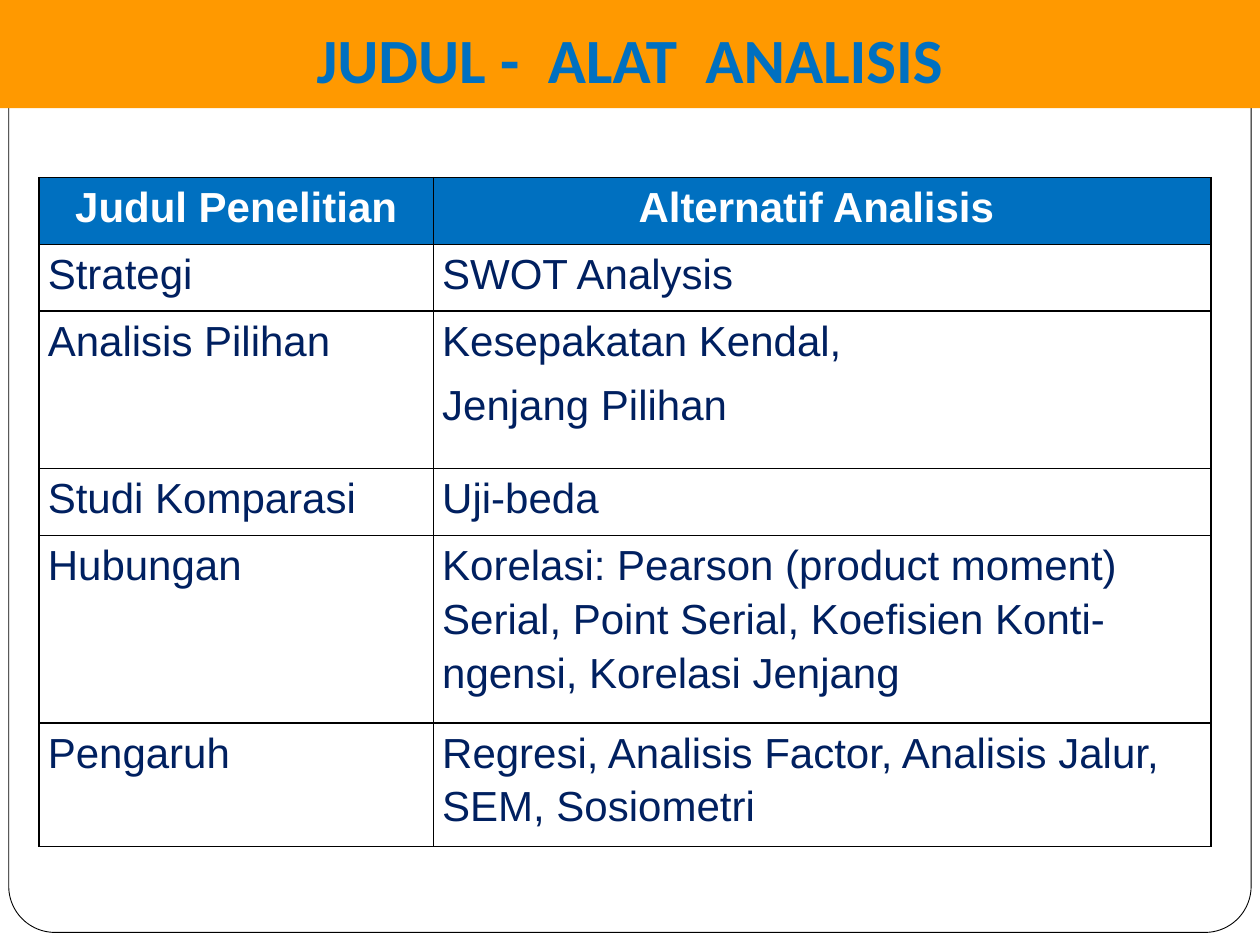
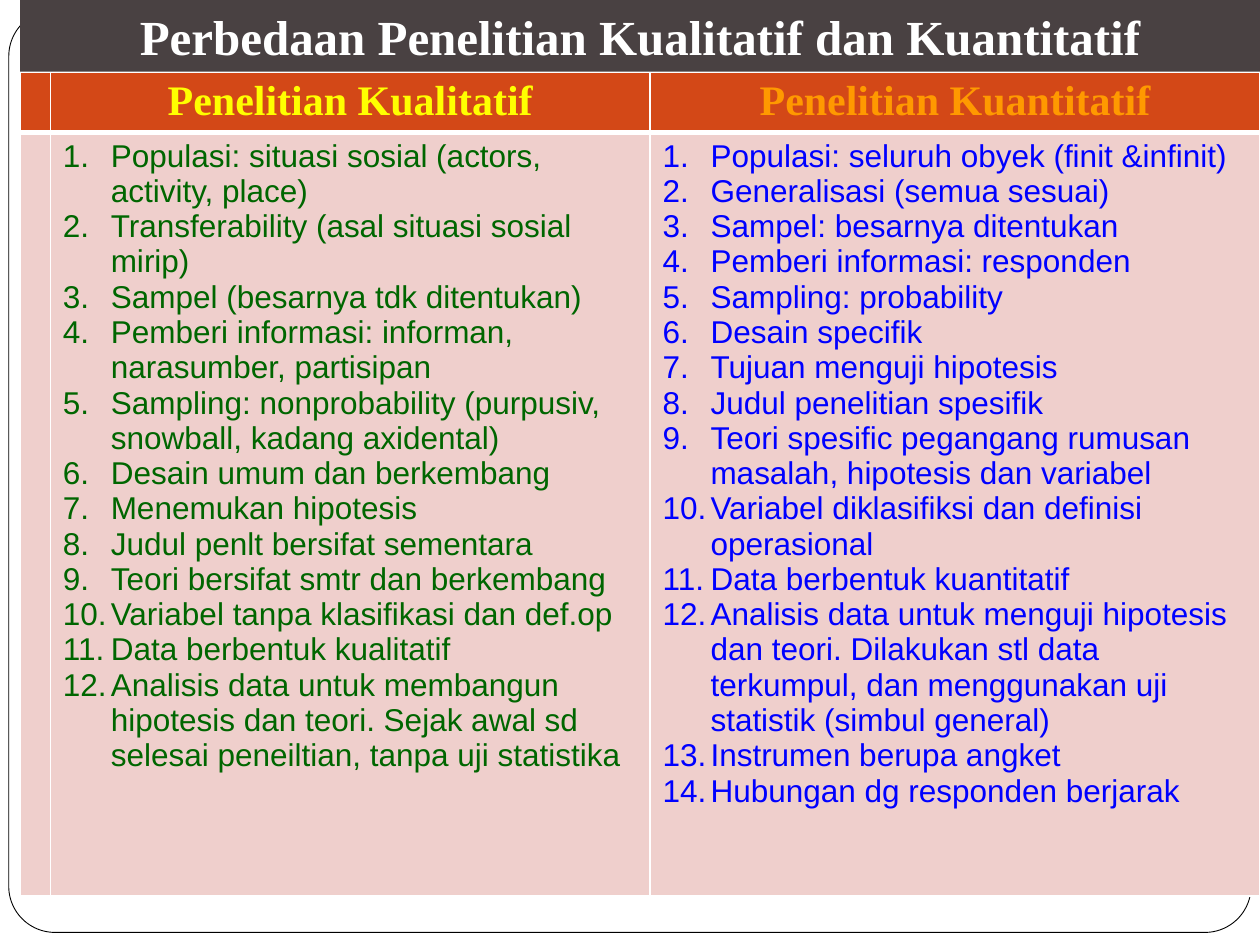
"""Builds two slides on research titles, analysis tools and research types."""
import pptx
import pptx.util
import pptx.dml.color
import pptx.enum.shapes
import pptx.enum.text
import pptx.oxml
import pptx.oxml.ns

WIDTH, HEIGHT = 10, 7.5
COLORS = {
    "paper": "FFFFFF", "ink": "000000", "orange": "FF9900", "blue": "0070C0",
    "navy": "002060", "rust": "D34817", "pink": "EFCFCC", "brown": "494142",
    "yellow": "FFFF00", "green": "006600", "bright blue": "0000FF",
}
TOOLS_TITLE = "JUDUL -  ALAT  ANALISIS"
TOOLS = [
    ("Judul Penelitian", ["Alternatif Analisis "], 0.53),
    ("Strategi", ["SWOT Analysis"], 0.53),
    ("Analisis Pilihan", ["Kesepakatan Kendal,", "Jenjang Pilihan"], 1.25),
    ("Studi Komparasi", ["Uji-beda"], 0.53),
    ("Hubungan", ["Korelasi: Pearson (product moment) Serial, Point Serial, "
                  "Koefisien Konti-ngensi, Korelasi Jenjang"], 1.49),
    ("Pengaruh", ["Regresi, Analisis Factor, Analisis Jalur, SEM, Sosiometri"], 0.98),
]
TYPES_TITLE = "Perbedaan Penelitian Kualitatif dan Kuantitatif"
TYPES = [
    ("Penelitian Kualitatif", "yellow", "green", [
        "Populasi: situasi sosial (actors, activity, place)",
        "Transferability (asal situasi sosial mirip)",
        "Sampel (besarnya tdk ditentukan)",
        "Pemberi informasi: informan, narasumber, partisipan",
        "Sampling: nonprobability (purpusiv, snowball, kadang axidental)",
        "Desain umum dan berkembang",
        "Menemukan hipotesis",
        "Judul penlt bersifat sementara",
        "Teori bersifat smtr dan berkembang",
        "Variabel tanpa klasifikasi dan def.op",
        "Data berbentuk kualitatif",
        "Analisis data untuk membangun hipotesis dan teori. Sejak awal sd "
        "selesai peneiltian, tanpa uji statistika",
    ]),
    ("Penelitian Kuantitatif", "orange", "bright blue", [
        "Populasi: seluruh obyek (finit &infinit)",
        "Generalisasi (semua sesuai)",
        "Sampel: besarnya ditentukan",
        "Pemberi informasi: responden",
        "Sampling: probability",
        "Desain specifik",
        "Tujuan menguji hipotesis",
        "Judul penelitian spesifik",
        "Teori spesific pegangang rumusan masalah, hipotesis dan variabel",
        "Variabel diklasifiksi dan definisi operasional",
        "Data berbentuk kuantitatif",
        "Analisis data untuk menguji hipotesis dan teori. Dilakukan stl data "
        "terkumpul, dan menggunakan uji statistik (simbul general)",
        "Instrumen berupa angket",
        "Hubungan dg responden berjarak",
    ]),
]


def inches(*lengths):
    return [pptx.util.Inches(length) for length in lengths]


def color(name):
    return pptx.dml.color.RGBColor.from_string(COLORS[name])


def paint(target, name):
    target.fill.solid()
    target.fill.fore_color.rgb = color(name)


def write(frame, lines, font, size, ink, bold=False, center=False, gap=None, numbered=False):
    frame.text = "\n".join(lines)
    for para in frame.paragraphs:
        align = pptx.enum.text.PP_ALIGN
        para.alignment = align.CENTER if center else align.LEFT
        if gap is not None:
            para.line_spacing = 1.15
            para.space_before = para.space_after = pptx.util.Pt(gap)
        if numbered:
            properties = para._p.get_or_add_pPr()
            indent = pptx.util.Inches(0.38)
            properties.set("marL", str(indent))
            properties.set("indent", str(-indent))
            number = pptx.oxml.ns.qn("a:buAutoNum")
            properties.append(properties.makeelement(number, {"type": "arabicPeriod"}))
        for span in para.runs:
            span.font.name = font
            span.font.size = pptx.util.Pt(size)
            span.font.bold = bold
            span.font.color.rgb = color(ink)


def add_block(page, kind, place, fill):
    box = page.shapes.add_shape(kind, *inches(*place))
    box.shadow.inherit = False
    paint(box, fill)
    box.line.fill.background()
    return box


def add_page(deck):
    page = deck.slides.add_slide(deck.slide_layouts[6])
    frame = add_block(page, pptx.enum.shapes.MSO_SHAPE.ROUNDED_RECTANGLE,
                      (0.07, 0.08, WIDTH - 0.14, 7.32), "paper")
    frame.adjustments[0] = 0.05
    frame.line.color.rgb = color("ink")
    frame.line.width = pptx.util.Pt(0.5)
    return page


def add_title(page, left, height, fill, text, font, size, ink):
    band = add_block(page, pptx.enum.shapes.MSO_SHAPE.RECTANGLE,
                     (left, 0, WIDTH - left, height), fill)
    write(band.text_frame, [text], font, size, ink, bold=True, center=True)
    band.text_frame.word_wrap = True
    return band.text_frame


def add_grid(page, left, top, columns, rows):
    place = inches(left, top, sum(columns), sum(rows))
    table = page.shapes.add_table(len(rows), len(columns), *place).table
    table.first_row = table.horz_banding = False
    for column, width in zip(table.columns, inches(*columns)):
        column.width = width
    for row, height in zip(table.rows, inches(*rows)):
        row.height = height
    return table


def set_borders(cell, name, top=1, bottom=1):
    widths = {"L": 1, "R": 1, "T": top, "B": bottom}
    for position, (side, width) in enumerate(widths.items()):
        line = pptx.oxml.parse_xml(
            f'<a:ln{side} {pptx.oxml.ns.nsdecls("a")} w="{pptx.util.Pt(width)}">'
            f'<a:solidFill><a:srgbClr val="{COLORS[name]}"/></a:solidFill></a:ln{side}>')
        cell._tc.get_or_add_tcPr().insert(position, line)


def build_tools(deck):
    page = add_page(deck)
    title = add_title(page, 0, 0.86, "orange", TOOLS_TITLE, "Calibri", 36, "blue")
    title.vertical_anchor = pptx.enum.text.MSO_ANCHOR.BOTTOM
    title.margin_bottom = pptx.util.Inches(0.1)
    table = add_grid(page, 0.31, 1.41, (3.13, 6.17), [height for *_, height in TOOLS])
    for row, (subject, methods, _) in enumerate(TOOLS):
        header = row == 0
        for column, lines in enumerate(([subject], methods)):
            cell = table.cell(row, column)
            cell.margin_left = cell.margin_right = pptx.util.Inches(0.07)
            cell.margin_top = cell.margin_bottom = 0
            if header:
                paint(cell, "blue")
            else:
                cell.fill.background()
            write(cell.text_frame, lines, "Arial", 24, "paper" if header else "navy",
                  bold=header, center=header, gap=6 if header else 3)
            set_borders(cell, "ink")


def build_types(deck):
    left, band = 0.16, 0.57
    page = add_page(deck)
    table = add_grid(page, left, band, (0.24, 4.76, 4.84), (0.48, 6.06))
    for column in range(3):
        head, body = table.cell(0, column), table.cell(1, column)
        paint(head, "rust")
        paint(body, "pink")
        set_borders(head, "paper", bottom=3)
        set_borders(body, "paper", top=3)
    for column, (name, head_ink, body_ink, points) in enumerate(TYPES, 1):
        write(table.cell(0, column).text_frame, [name], "Times New Roman", 24, head_ink,
              bold=True, center=True)
        write(table.cell(1, column).text_frame, points, "Arial", 18, body_ink, numbered=True)
    add_title(page, left, band, "brown", TYPES_TITLE, "Times New Roman", 28, "paper")


def main():
    deck = pptx.Presentation()
    deck.slide_width, deck.slide_height = inches(WIDTH, HEIGHT)
    build_tools(deck)
    build_types(deck)
    deck.save("out.pptx")


if __name__ == "__main__":
    main()
